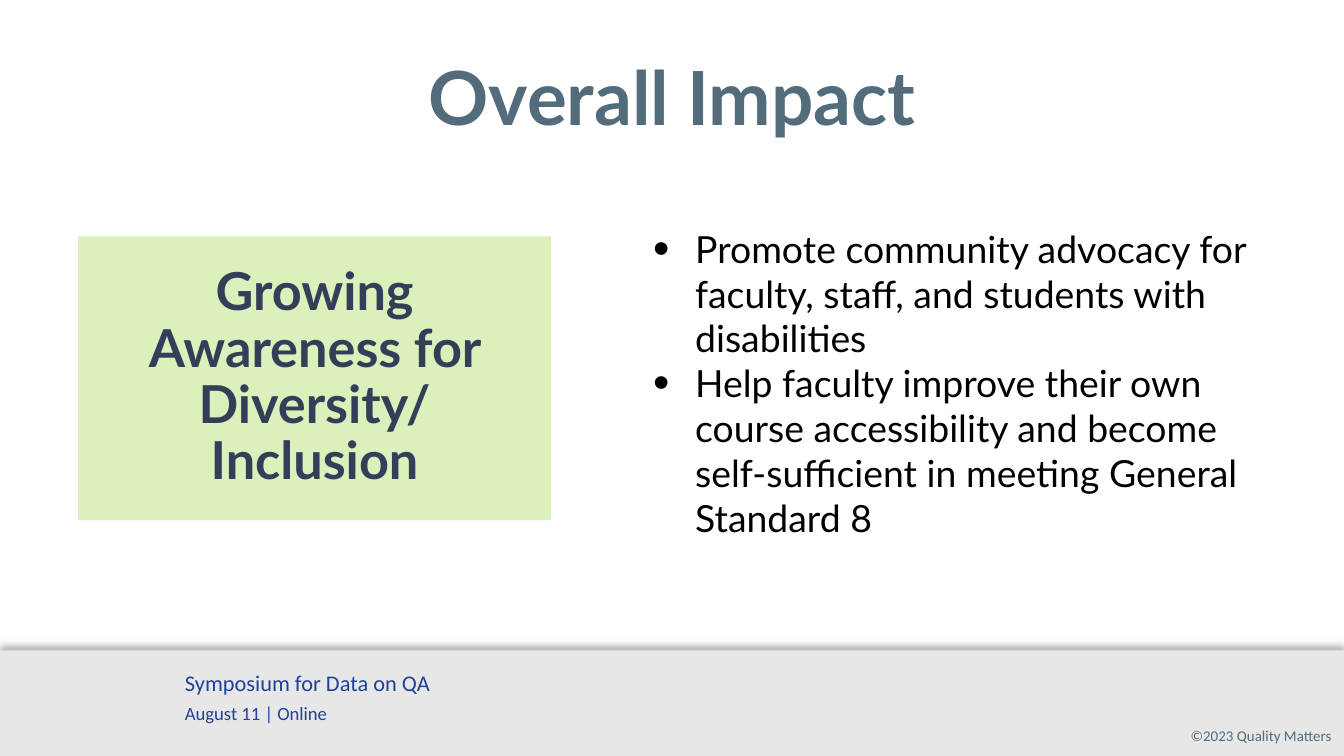
from dataclasses import dataclass

from lxml import etree
from pptx import Presentation
from pptx.dml.color import RGBColor
from pptx.enum import shapes, text
from pptx.oxml import ns
from pptx.util import Pt

HUES = {
    "white": "FFFFFF", "black": "000000", "slate": "526C7C", "navy": "333F58",
    "blue": "1F419A", "lime": "DBF0BA", "gray": "E7E7E7",
}
ALIGN = text.PP_ALIGN
ANCHOR = text.MSO_ANCHOR


@dataclass
class Box:
    left: float
    top: float
    width: float
    height: float

    def args(self) -> tuple:
        return tuple(Pt(n) for n in (self.left, self.top, self.width, self.height))


@dataclass
class Line:
    words: str
    size: float
    hue: str
    face: str = "Lato"
    bold: bool = False
    align: ALIGN = ALIGN.LEFT
    before: float = 0
    space: float = 1.0
    bullet: bool = False


def color(name: str) -> RGBColor:
    return RGBColor.from_string(HUES[name])


def add_xml(parent, tag: str, **attrs: str):
    return etree.SubElement(parent, ns.qn(tag), attrs)


def add_bullet(para, indent: float) -> None:
    props = para._p.get_or_add_pPr()
    props.set("marL", str(Pt(indent)))
    props.set("indent", str(-Pt(indent)))
    add_xml(add_xml(props, "a:buClr"), "a:srgbClr", val=HUES["black"])
    add_xml(props, "a:buSzPct", val="125000")
    add_xml(props, "a:buFont", typeface="Arial")
    add_xml(props, "a:buChar", char="•")


def write(shape, lines: list[Line], anchor=ANCHOR.TOP, pad=(7.2, 3.6, 7.2, 3.6)) -> None:
    frame = shape.text_frame
    frame.word_wrap = True
    frame.auto_size = text.MSO_AUTO_SIZE.NONE
    frame.vertical_anchor = anchor
    frame.margin_left, frame.margin_top, frame.margin_right, frame.margin_bottom = map(Pt, pad)
    for i, line in enumerate(lines):
        para = frame.add_paragraph() if i else frame.paragraphs[0]
        para.text = line.words
        if line.bullet:
            add_bullet(para, 22.5)
        para.alignment = line.align
        para.space_before = Pt(line.before)
        para.line_spacing = line.space
        font = para.font
        font.name, font.size, font.bold = line.face, Pt(line.size), line.bold
        font.color.rgb = color(line.hue)


def place(shape, box: Box):
    shape.left, shape.top, shape.width, shape.height = box.args()
    return shape


def add_rect(slide, box: Box, hue: str):
    rect = slide.shapes.add_shape(shapes.MSO_SHAPE.RECTANGLE, *box.args())
    rect.shadow.inherit = False
    rect.fill.solid()
    rect.fill.fore_color.rgb = color(hue)
    rect.line.fill.background()
    return rect


def add_shadow(shape) -> None:
    effects = shape._element.spPr.find(ns.qn("a:effectLst"))
    shade = add_xml(effects, "a:outerShdw", blurRad=str(Pt(4)), dist=str(Pt(3)),
                    dir="16200000", rotWithShape="0")
    add_xml(add_xml(shade, "a:srgbClr", val=HUES["black"]), "a:alpha", val="29000")


def main() -> None:
    deck = Presentation()
    deck.slide_width, deck.slide_height = Pt(720), Pt(405)
    slide = deck.slides.add_slide(deck.slide_layouts[1])
    slide.background.fill.solid()
    slide.background.fill.fore_color.rgb = color("white")

    # Title and bullet list
    title = place(slide.shapes.title, Box(0, 26, 720, 50))
    write(title, [Line("Overall Impact", 40, "slate", bold=True, align=ALIGN.CENTER)],
          ANCHOR.MIDDLE)
    goals = [
        "Promote community advocacy for faculty, staff, and students with disabilities",
        "Help faculty improve their own course accessibility and become "
        "self-sufficient in meeting General Standard 8",
    ]
    body = place(slide.placeholders[1], Box(342.7, 117.4, 335.5, 170))
    write(body, [Line(goal, 20, "black", bullet=True) for goal in goals])

    # Theme card
    card = add_rect(slide, Box(41.8, 126.7, 253.4, 152), "lime")
    write(card, [Line("Growing Awareness for Diversity/\vInclusion", 28, "navy", bold=True,
                      align=ALIGN.CENTER, space=0.9)], ANCHOR.MIDDLE, (8.6,) * 4)

    # Footer band
    add_shadow(add_rect(slide, Box(0, 348.5, 720, 56.5), "gray"))
    event = slide.shapes.add_textbox(*Box(92, 355, 460, 37).args())
    write(event, [
        Line("Symposium for Data on QA", 12, "blue", "Calibri"),
        Line("August 11 | Online", 10, "blue", "Calibri", before=3),
    ])
    rights = slide.shapes.add_textbox(*Box(599, 386, 114.5, 17).args())
    write(rights, [Line("©2023 Quality Matters", 8, "slate", "Calibri", align=ALIGN.RIGHT)],
          pad=(7.2, 3.6, 0, 3.6))

    deck.save("out.pptx")


if __name__ == "__main__":
    main()
